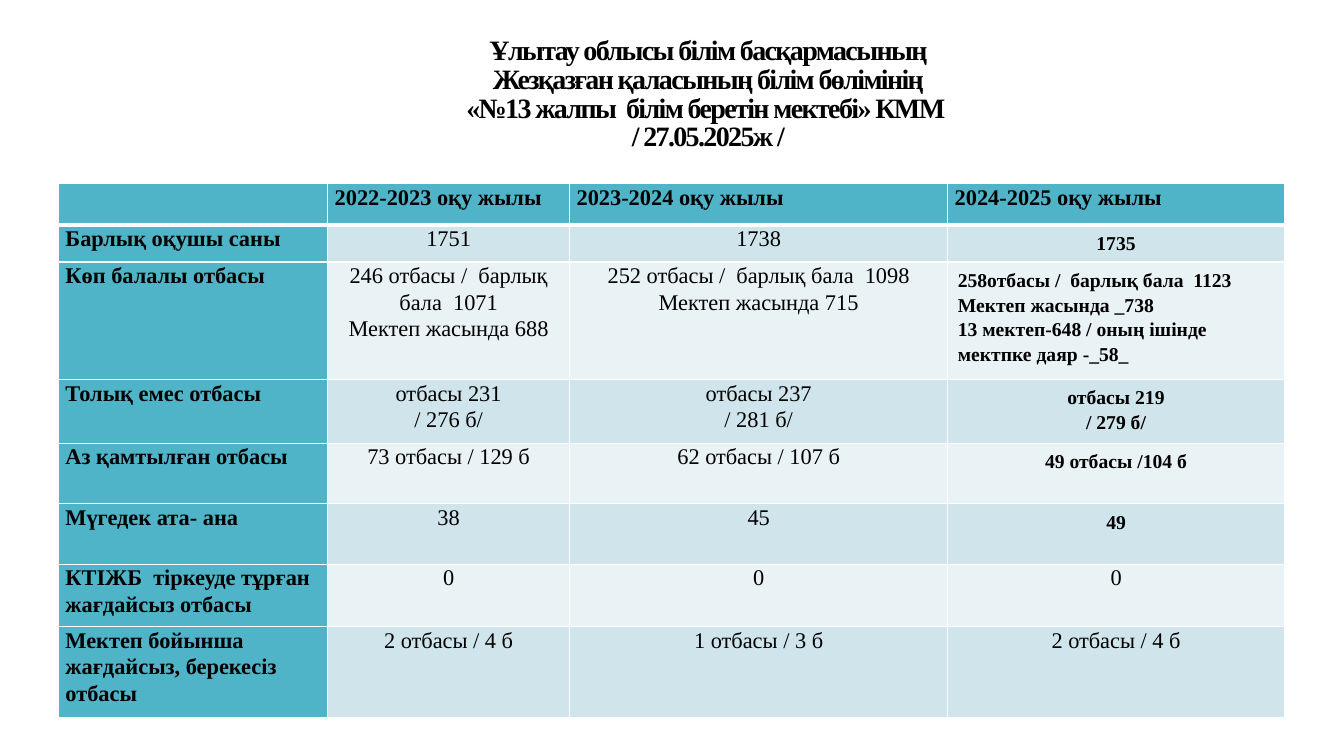
from dataclasses import dataclass

from lxml.etree import SubElement
from pptx import Presentation
from pptx.dml.color import RGBColor
from pptx.enum.text import MSO_ANCHOR, PP_ALIGN
from pptx.oxml.ns import qn
from pptx.util import Inches, Pt


@dataclass(frozen=True)
class Theme:
    font: str = "Times New Roman"
    text: str = "000000"
    head: str = "50B4C8"
    bands: tuple = ("D0E5EB", "E9F2F5")
    rule: str = "FFFFFF"
    title_size: float = 20
    body_size: float = 16
    latest_size: float = 14
    title_tracking: int = -120


THEME = Theme()
TITLE_BOX = (2.99, 0.32, 8.07, 1.53)
TABLE_BOX = (0.58, 1.82, 12.16, 5.29)
COLUMNS = (2.67, 2.4, 3.75, 3.34)
ROWS = (0.41, 0.37, 1.16, 0.63, 0.6, 0.6, 0.62, 0.9)

TITLE = ("Ұлытау облысы білім басқармасының\v"
         "Жезқазған қаласының білім бөлімінің\v"
         "«№13 жалпы  білім беретін мектебі» КММ \v"
         "/ 27.05.2025ж /")
FAMILIES = (
    ("", "2022-2023 оқу жылы", "2023-2024 оқу жылы", "2024-2025 оқу жылы"),
    ("Барлық оқушы саны", "1751", "1738", "1735"),
    ("Көп балалы отбасы",
     "246 отбасы /  барлық бала  1071\nМектеп жасында 688",
     "252 отбасы /  барлық бала  1098\nМектеп жасында 715",
     "258отбасы /  барлық бала  1123\n"
     "Мектеп жасында _738\v13 мектеп-648 / оның ішінде мектпке даяр -_58_"),
    ("Толық емес отбасы", "отбасы 231\n/ 276 б/", "отбасы 237\n/ 281 б/",
     "отбасы 219\n/ 279 б/"),
    ("Аз қамтылған отбасы", "73 отбасы / 129 б", "62 отбасы / 107 б",
     "49 отбасы /104 б"),
    ("Мүгедек ата- ана", "38", "45", "49"),
    ("КТІЖБ  тіркеуде тұрған жағдайсыз отбасы", "0", "0", "0"),
    ("Мектеп бойынша жағдайсыз, берекесіз отбасы",
     "2 отбасы / 4 б", "1 отбасы / 3 б", "2 отбасы / 4 б"),
)
LEFT_ALIGNED = (2, 3)  # the one long entry among the yearly figures
LATEST_ROWS = range(1, 6)  # rows whose newest figure is small and bold


def format_text(tf, size, bold, align, spacing):
    for p in tf.paragraphs:
        p.alignment = align
        p.line_spacing = spacing
        for r in p.runs:
            r.font.name = THEME.font
            r.font.size = Pt(size)
            r.font.bold = bold
            r.font.color.rgb = RGBColor.from_string(THEME.text)


def set_borders(cell, bottom):
    # Borders come before the fill in the cell properties
    tcPr = cell._tc.get_or_add_tcPr()
    for side, width in (("L", 1), ("R", 1), ("T", 1), ("B", bottom)):
        ln = SubElement(tcPr, qn(f"a:ln{side}"), w=str(Pt(width)))
        fill = SubElement(ln, qn("a:solidFill"))
        SubElement(fill, qn("a:srgbClr"), val=THEME.rule)


def add_title(s, box):
    tf = s.shapes.add_textbox(*map(Inches, box)).text_frame
    tf.word_wrap = True
    tf.vertical_anchor = MSO_ANCHOR.MIDDLE
    tf.margin_bottom = Inches(0.33)
    tf.text = TITLE
    format_text(tf, THEME.title_size, True, PP_ALIGN.CENTER, 0.85)
    for r in tf.paragraphs[0].runs:
        r.font._element.set("spc", str(THEME.title_tracking))


def fill_cell(cell, row, col, text):
    header = row == 0 or col == 0
    latest = col == len(COLUMNS) - 1 and row in LATEST_ROWS
    left = header or (row, col) == LEFT_ALIGNED

    set_borders(cell, 3 if row == 0 else 1)
    cell.fill.solid()
    color = THEME.head if header else THEME.bands[(row - 1) % 2]
    cell.fill.fore_color.rgb = RGBColor.from_string(color)
    if not latest:
        cell.margin_left = cell.margin_right = Inches(0.07)
        cell.margin_top = cell.margin_bottom = 0
    cell.text_frame.text = text
    format_text(cell.text_frame,
                THEME.latest_size if latest else THEME.body_size,
                header or latest,
                PP_ALIGN.LEFT if left else PP_ALIGN.CENTER,
                1.14 if latest else 1.07)


def add_family_table(s, box):
    table = s.shapes.add_table(len(ROWS), len(COLUMNS),
                               *map(Inches, box)).table
    for column, share in zip(table.columns, COLUMNS):
        column.width = Inches(box[2] * share / sum(COLUMNS))
    for line, share in zip(table.rows, ROWS):
        line.height = Inches(box[3] * share / sum(ROWS))
    for row, entries in enumerate(FAMILIES):
        for col, text in enumerate(entries):
            fill_cell(table.cell(row, col), row, col, text)


def main():
    prs = Presentation()
    prs.slide_width, prs.slide_height = Inches(13.33), Inches(7.5)
    s = prs.slides.add_slide(prs.slide_layouts[6])
    add_title(s, TITLE_BOX)
    add_family_table(s, TABLE_BOX)
    prs.save("out.pptx")


if __name__ == "__main__":
    main()
